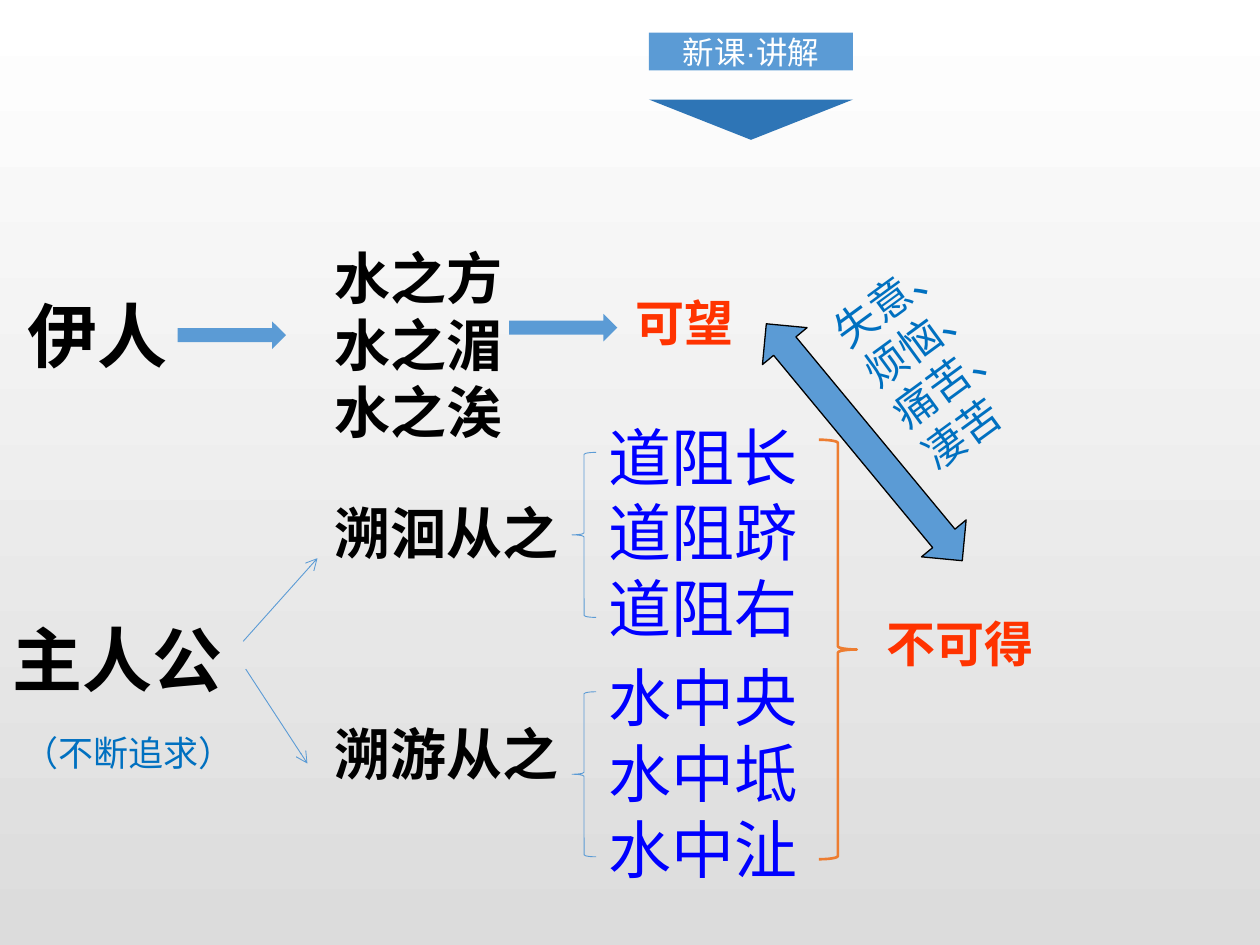
from dataclasses import dataclass

from lxml.etree import SubElement
from pptx import Presentation
from pptx.dml.color import RGBColor
from pptx.enum.shapes import MSO_CONNECTOR, MSO_SHAPE
from pptx.enum.text import MSO_ANCHOR, PP_ALIGN
from pptx.oxml.ns import qn
from pptx.util import Inches, Pt


@dataclass(frozen=True)
class Theme:
    font: str = "Arial"
    black: str = "000000"
    white: str = "FFFFFF"
    gray: str = "DCDCDC"
    red: str = "FF3300"
    verse_blue: str = "0000FF"
    note_blue: str = "0070C0"
    blue: str = "5B9BD5"
    dark_blue: str = "2E75B6"
    orange: str = "ED7D31"
    subject_size: int = 40
    verse_size: int = 36
    phrase_size: int = 32
    outcome_size: int = 28
    feeling_size: int = 24
    note_size: int = 20
    banner_size: int = 18


THEME = Theme()


@dataclass(frozen=True)
class Label:
    lines: tuple[str, ...]
    box: tuple[float, float, float, float]
    size: int
    color: str
    bold: bool = False
    centered: bool = False
    wrap: bool = True
    rotation: float = 0
    line_spacing: float = 1.0


@dataclass(frozen=True)
class Figure:
    kind: MSO_SHAPE
    box: tuple[float, float, float, float]
    fill: str | None = None
    line: str | None = None
    line_width: float = 0.75
    rotation: float = 0
    adjustments: tuple[float, ...] = ()


@dataclass(frozen=True)
class Arrow:
    start: tuple[float, float]
    end: tuple[float, float]


def subject(text: str, box: tuple) -> Label:
    return Label((text,), box, THEME.subject_size, THEME.black, bold=True)


def phrases(lines: tuple[str, ...], box: tuple) -> Label:
    return Label(lines, box, THEME.phrase_size, THEME.black, bold=True)


def outcome(text: str, box: tuple) -> Label:
    return Label((text,), box, THEME.outcome_size, THEME.red, bold=True,
                 centered=True, wrap=False)


def verses(lines: tuple[str, ...], top: float) -> Label:
    return Label(lines, (4.73, top, 1.95, 1.92), THEME.verse_size, THEME.verse_blue)


LABELS = (
    subject("伊人", (0.12, 2.27, 1.6, 0.77)),
    subject("主人公", (0, 4.84, 2.04, 0.77)),
    phrases(("水之方", "水之湄", "水之涘"), (2.56, 1.88, 1.62, 1.72)),
    phrases(("溯洄从之",), (2.56, 3.91, 2.97, 0.64)),
    phrases(("溯游从之",), (2.56, 5.66, 2.17, 0.64)),
    verses(("道阻长", "道阻跻", "道阻右"), 3.27),
    verses(("水中央", "水中坻", "水中沚"), 5.18),
    outcome("可望", (4.9, 2.27, 1.06, 0.58)),
    outcome("不可得", (6.8, 4.82, 1.64, 0.67)),
    Label(("失意、", "烦恼、", "痛苦、", "凄苦"), (6.83, 2.03, 1.1, 1.72),
          THEME.feeling_size, THEME.note_blue, rotation=323.8),
    Label(("（不断追求）",), (0.09, 5.66, 1.87, 0.54), THEME.note_size,
          THEME.note_blue, wrap=False, line_spacing=1.3),
)

FIGURES = (
    # python-pptx lists this arrow's head length before its shaft width
    Figure(MSO_SHAPE.UP_DOWN_ARROW, (6.63, 2.29, 0.46, 2.44), THEME.blue,
           THEME.black, rotation=320.4, adjustments=(1.07, 0.5)),
    *(Figure(MSO_SHAPE.RIGHT_ARROW, (left, top, 0.86, 0.22), THEME.blue)
      for left, top in ((1.41, 2.55), (4.04, 2.49))),
    Figure(MSO_SHAPE.RIGHT_BRACE, (6.5, 3.49, 0.3, 3.33),
           line=THEME.orange, line_width=1.5),
    *(Figure(MSO_SHAPE.LEFT_BRACE, (4.54, top, 0.19, 1.31),
             line=THEME.blue, line_width=0.5)
      for top in (3.59, 5.49)),
    Figure(MSO_SHAPE.ISOSCELES_TRIANGLE, (5.15, 0.79, 1.62, 0.32),
           THEME.dark_blue, rotation=180),
)

BANNER = Figure(MSO_SHAPE.RECTANGLE, (5.15, 0.26, 1.62, 0.3), THEME.blue)

ARROWS = (
    Arrow((1.93, 5.09), (2.52, 4.43)),
    Arrow((1.95, 5.31), (2.44, 6.06)),
)


def rgb(color: str) -> RGBColor:
    return RGBColor.from_string(color)


def style_paragraph(paragraph, size: int, color: str, bold: bool = False) -> None:
    paragraph.font.name = THEME.font
    paragraph.font.size = Pt(size)
    paragraph.font.bold = bold
    paragraph.font.color.rgb = rgb(color)


def paint_background(slide) -> None:
    fill = slide.background.fill
    fill.gradient()
    fill.gradient_angle = 270
    for stop, color in zip(fill.gradient_stops, (THEME.white, THEME.gray)):
        stop.color.rgb = rgb(color)


def add_label(slide, label: Label) -> None:
    text_box = slide.shapes.add_textbox(*map(Inches, label.box))
    text_box.rotation = label.rotation
    frame = text_box.text_frame
    frame.word_wrap = label.wrap
    frame.text = "\n".join(label.lines)
    for paragraph in frame.paragraphs:
        paragraph.alignment = PP_ALIGN.CENTER if label.centered else PP_ALIGN.LEFT
        paragraph.line_spacing = label.line_spacing
        style_paragraph(paragraph, label.size, label.color, label.bold)


def add_figure(slide, figure: Figure):
    shape = slide.shapes.add_shape(figure.kind, *map(Inches, figure.box))
    shape.shadow.inherit = False
    shape.rotation = figure.rotation
    for index, value in enumerate(figure.adjustments):
        shape.adjustments[index] = value
    if figure.fill:
        shape.fill.solid()
        shape.fill.fore_color.rgb = rgb(figure.fill)
    else:
        shape.fill.background()
    if figure.line:
        shape.line.color.rgb = rgb(figure.line)
        shape.line.width = Pt(figure.line_width)
    else:
        shape.line.fill.background()
    return shape


def add_banner(slide) -> None:
    frame = add_figure(slide, BANNER).text_frame
    frame.margin_left = frame.margin_right = frame.margin_top = frame.margin_bottom = 0
    frame.vertical_anchor = MSO_ANCHOR.MIDDLE
    frame.text = "新课·讲解"
    paragraph = frame.paragraphs[0]
    paragraph.alignment = PP_ALIGN.CENTER
    style_paragraph(paragraph, THEME.banner_size, THEME.white)


def add_arrow(slide, arrow: Arrow) -> None:
    connector = slide.shapes.add_connector(
        MSO_CONNECTOR.STRAIGHT, *map(Inches, arrow.start + arrow.end))
    connector.line.color.rgb = rgb(THEME.blue)
    connector.line.width = Pt(0.5)
    SubElement(connector.line._get_or_add_ln(), qn("a:tailEnd"), type="arrow")
    SubElement(connector._element.spPr, qn("a:effectLst"))


def main() -> None:
    presentation = Presentation()
    presentation.slide_width, presentation.slide_height = Inches(10), Inches(7.5)
    slide = presentation.slides.add_slide(presentation.slide_layouts[6])
    paint_background(slide)
    for label in LABELS:
        add_label(slide, label)
    for figure in FIGURES:
        add_figure(slide, figure)
    for arrow in ARROWS:
        add_arrow(slide, arrow)
    add_banner(slide)
    presentation.save("out.pptx")


if __name__ == "__main__":
    main()
